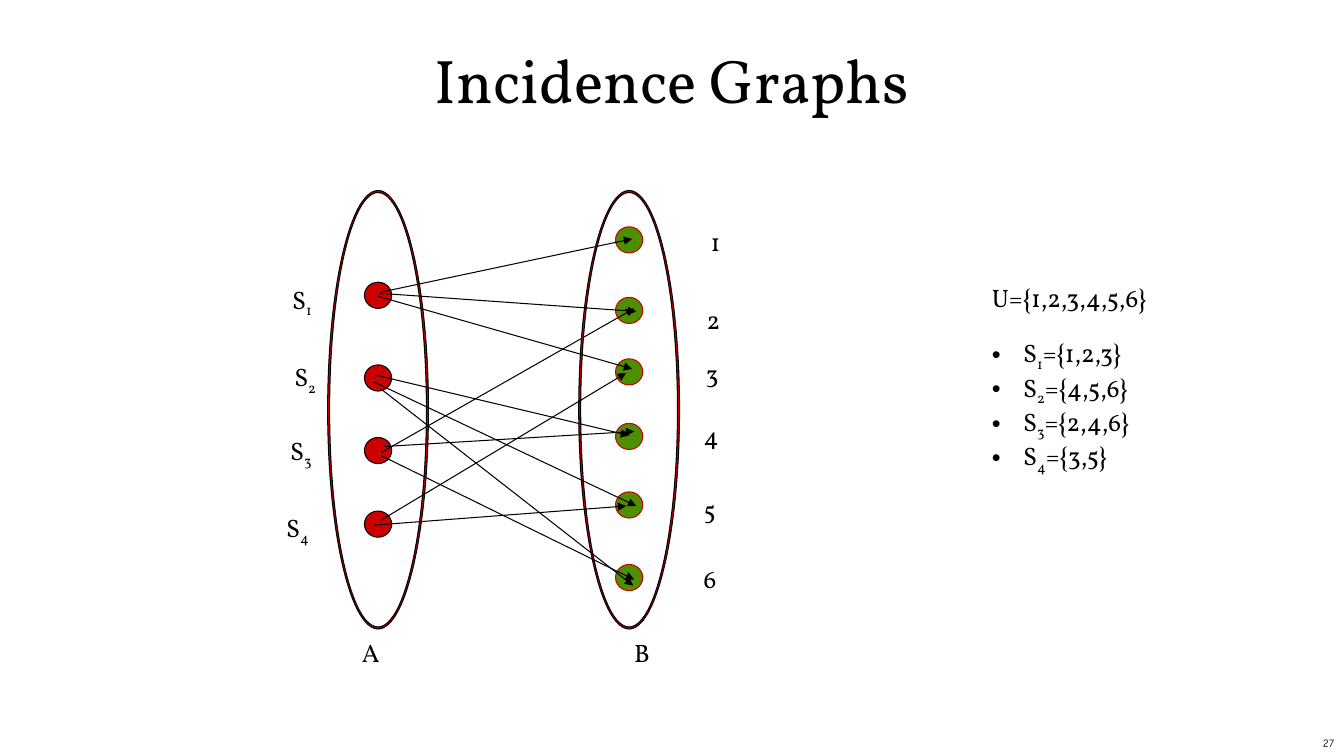
from lxml.etree import SubElement
from pptx import Presentation
from pptx.dml.color import RGBColor
from pptx.enum.shapes import MSO_CONNECTOR as Connector, MSO_SHAPE as Shape
from pptx.enum.text import MSO_ANCHOR as Anchor, PP_ALIGN as Align
from pptx.oxml.ns import qn
from pptx.util import Inches, Pt

WIDTH, HEIGHT = 13.33, 7.5
BLACK, RED, GREEN = "000000", "CC0000", "4E8F00"
BODY_FONT, NUMBER_FONT = "Vollkorn", "Comic Neue"

# Both ovals share one size; each column of dots is centred in its oval
OVAL_TOP, OVAL_WIDTH, OVAL_HEIGHT = 1.89, 1, 4.35
DOT_WIDTH, DOT_HEIGHT = 0.27, 0.26
SET_CENTER, ELEMENT_CENTER = 3.75, 6.24
LABEL_HEIGHT = 0.4

# Dot centre, then left and top of the label
SETS = [(2.93, 2.8, 2.77), (3.75, 2.82, 3.54), (4.47, 2.78, 4.27), (5.2, 2.74, 5.03)]
ELEMENTS = [(2.38, 6.95, 2.2), (3.08, 6.91, 2.97), (3.69, 6.9, 3.51),
            (4.33, 6.88, 4.12), (5.01, 6.88, 4.85), (5.73, 6.88, 5.54)]

# Start and end of the arrows that leave each set
ARROWS = {
    "S1": [(3.77, 2.9, 6.27, 2.37), (3.77, 2.91, 6.31, 3.09), (3.75, 2.94, 6.27, 3.66)],
    "S2": [(3.72, 3.72, 6.24, 4.32), (3.71, 3.79, 6.31, 5.02), (3.78, 3.86, 6.28, 5.81)],
    "S3": [(3.78, 4.49, 6.29, 3.06), (3.81, 4.43, 6.29, 4.28), (3.78, 4.52, 6.29, 5.75)],
    "S4": [(3.78, 5.16, 6.21, 3.7), (3.71, 5.21, 6.21, 5.02)],
}
MEMBERS = ["1,2,3", "4,5,6", "2,4,6", "3,5"]


def color(value):
    return RGBColor.from_string(value)


def box(*lengths):
    return [Inches(length) for length in lengths]


def set_font(paragraph, size=18, name=BODY_FONT):
    font = paragraph.font
    font.size, font.name = Pt(size), name
    font.color.rgb = color(BLACK)


def add_text(slide, place, text="", size=18, name=BODY_FONT, align=Align.LEFT,
             anchor=Anchor.TOP, wrap=False):
    frame = slide.shapes.add_textbox(*box(*place)).text_frame
    frame.word_wrap = wrap
    frame.vertical_anchor = anchor
    paragraph = frame.paragraphs[0]
    paragraph.text = text
    paragraph.alignment = align
    set_font(paragraph, size, name)
    return frame


def add_set_name(paragraph, number):
    paragraph.add_run().text = "S"
    subscript = paragraph.add_run()
    subscript.text = str(number)
    subscript._r.get_or_add_rPr().set("baseline", "-25000")


def add_bullet(paragraph):
    properties = paragraph._p.get_or_add_pPr()
    properties.set("marL", str(Inches(0.31)))
    properties.set("indent", str(-Inches(0.31)))
    SubElement(properties, qn("a:buFont")).set("typeface", "Arial")
    SubElement(properties, qn("a:buChar")).set("char", "•")


def add_outline(slide, kind, place, fill, line):
    shape = slide.shapes.add_shape(kind, *box(*place))
    shape.shadow.inherit = False
    shape.fill.solid()
    shape.fill.fore_color.rgb = color(fill)
    shape.line.color.rgb = color(line)
    shape.line.width = Pt(0.75)
    return shape


def add_oval(slide, center):
    place = (center - OVAL_WIDTH / 2, OVAL_TOP, OVAL_WIDTH, OVAL_HEIGHT)
    oval = add_outline(slide, Shape.DONUT, place, RED, BLACK)
    oval.adjustments[0] = 0.02


def add_dot(slide, center, middle, fill, line):
    place = (center - DOT_WIDTH / 2, middle - DOT_HEIGHT / 2, DOT_WIDTH, DOT_HEIGHT)
    add_outline(slide, Shape.OVAL, place, fill, line)


def add_arrow(slide, ends):
    arrow = slide.shapes.add_connector(Connector.STRAIGHT, *box(*ends))
    arrow.line.color.rgb = color(BLACK)
    arrow.line.width = Pt(0.75)
    SubElement(arrow.line._get_or_add_ln(), qn("a:tailEnd")).set("type", "triangle")
    SubElement(arrow._element.spPr, qn("a:effectLst"))


def add_graph(slide):
    # Ovals and dots
    for center in (SET_CENTER, ELEMENT_CENTER):
        add_oval(slide, center)
    for number, (middle, left, top) in enumerate(SETS, 1):
        add_dot(slide, SET_CENTER, middle, RED, BLACK)
        label = add_text(slide, (left, top, 0.55, LABEL_HEIGHT), wrap=True)
        add_set_name(label.paragraphs[0], number)
    for number, (middle, left, top) in enumerate(ELEMENTS, 1):
        add_dot(slide, ELEMENT_CENTER, middle, GREEN, RED)
        add_text(slide, (left, top, 0.33, LABEL_HEIGHT), str(number))

    # Arrows from sets to their elements
    for arrows in ARROWS.values():
        for ends in arrows:
            add_arrow(slide, ends)

    # Names of the two sides
    for name, left in (("A", 3.49), ("B", 6.19)):
        add_text(slide, (left, 6.27, 0.4, LABEL_HEIGHT), name)


def add_definitions(slide):
    frame = add_text(slide, (9.74, 2.75, 3.07, 2.22), "U={1,2,3,4,5,6}", wrap=True)
    for number, members in enumerate(MEMBERS, 1):
        paragraph = frame.add_paragraph()
        add_bullet(paragraph)
        if number == 1:
            paragraph.space_before = Pt(18)
        set_font(paragraph)
        add_set_name(paragraph, number)
        paragraph.add_run().text = f"={{{members}}}"


def main():
    presentation = Presentation()
    presentation.slide_width, presentation.slide_height = box(WIDTH, HEIGHT)
    slide = presentation.slides.add_slide(presentation.slide_layouts[6])

    # Title and page number
    title = add_text(slide, (0, 0, WIDTH, 1.18), "Incidence Graphs", size=44,
                     align=Align.CENTER, anchor=Anchor.BOTTOM, wrap=True)
    title.paragraphs[0].line_spacing = 0.7
    add_text(slide, (WIDTH - 2.78, HEIGHT - 0.25, 2.78, 0.25), "27", size=8,
             name=NUMBER_FONT, align=Align.RIGHT, anchor=Anchor.MIDDLE, wrap=True)

    add_graph(slide)
    add_definitions(slide)
    presentation.save("out.pptx")


if __name__ == "__main__":
    main()
